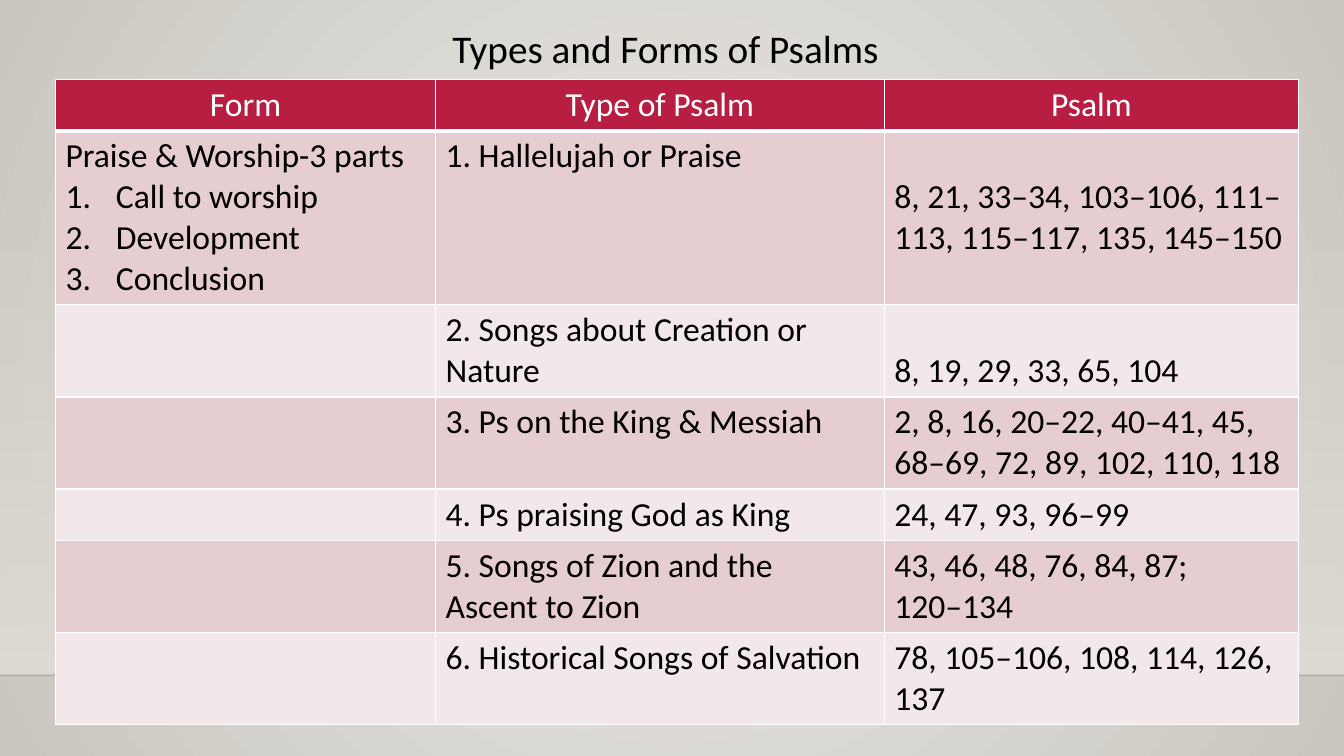
from lxml.etree import SubElement
from pptx import Presentation
from pptx.dml.color import RGBColor
from pptx.enum.shapes import MSO_CONNECTOR, MSO_SHAPE
from pptx.enum.text import MSO_ANCHOR, PP_ALIGN
from pptx.oxml.ns import qn
from pptx.util import Inches, Pt

BLACK = RGBColor(0x00, 0x00, 0x00)
WHITE = RGBColor(0xFF, 0xFF, 0xFF)
CRIMSON = RGBColor(0xB7, 0x1E, 0x42)
ROSE = RGBColor(0xE6, 0xCD, 0xCF)
PALE_ROSE = RGBColor(0xF3, 0xE8, 0xE9)
WALL_LIGHT = RGBColor(0xEC, 0xEA, 0xE7)
WALL_DARK = RGBColor(0xCA, 0xC7, 0xC1)
FLOOR = RGBColor(0xDF, 0xDB, 0xD5)

WIDTH, HEIGHT = 13.33, 7.5
COLUMN_WIDTHS = (3.77, 4.45, 4.11)
LINE_HEIGHT, CELL_PADDING = 0.4, 0.1

HEADINGS = ("Form", "Type of Psalm", "Psalm")
# Type, psalms, lines in the row, anchor of the psalms
PSALM_TYPES = [
    ("1. Hallelujah or Praise",
     "8, 21, 33–34, 103–106, 111–\n113, 115–117, 135, 145–150", 4, MSO_ANCHOR.MIDDLE),
    ("2. Songs about Creation or Nature",
     "8, 19, 29, 33, 65, 104", 2, MSO_ANCHOR.BOTTOM),
    ("3. Ps on the King & Messiah",
     "2, 8, 16, 20–22, 40–41, 45,\n68–69, 72, 89, 102, 110, 118", 2, MSO_ANCHOR.TOP),
    ("4. Ps praising God as King", "24, 47, 93, 96–99", 1, MSO_ANCHOR.TOP),
    ("5. Songs of Zion and the\nAscent to Zion",
     "43, 46, 48, 76, 84, 87;\n120–134", 2, MSO_ANCHOR.TOP),
    ("6. Historical Songs of Salvation",
     "78, 105–106, 108, 114, 126, 137", 2, MSO_ANCHOR.TOP),
]
PRAISE_FORM = "Praise & Worship-3 parts\nCall to worship\nDevelopment\nConclusion"


def write(frame, text, size=24, color=BLACK, align=PP_ALIGN.LEFT, numbered_from=None):
    """Fill a text frame, numbering the paragraphs from the given index on."""
    frame.word_wrap = True
    for index, line in enumerate(text.split("\n")):
        paragraph = frame.paragraphs[0] if index == 0 else frame.add_paragraph()
        if numbered_from is not None and index >= numbered_from:
            properties = paragraph._p.get_or_add_pPr()
            properties.set("marL", str(Inches(0.5)))
            properties.set("indent", str(Inches(-0.5)))
            SubElement(properties, qn("a:buFont"), typeface="+mj-lt")
            SubElement(properties, qn("a:buAutoNum"), type="arabicPeriod")
        paragraph.alignment = align
        run = paragraph.add_run()
        run.text = line
        run.font.name = "Calibri"
        run.font.size = Pt(size)
        run.font.bold = False
        run.font.color.rgb = color


def set_alpha(color_element, percent):
    SubElement(color_element, qn("a:alpha"), val=str(percent * 1000))


def set_stops(fill, *colors):
    fill.gradient()
    for stop, color in zip(fill.gradient_stops, colors):
        stop.color.rgb = color


def add_backdrop(slide, left, top, width, height):
    # Wall: circular gradient
    set_stops(slide.background.fill, WALL_LIGHT, WALL_DARK)
    gradient = next(slide._element.iter(qn("a:gradFill")))
    gradient.remove(gradient.find(qn("a:lin")))
    circle = SubElement(gradient, qn("a:path"), {"path": "circle"})
    SubElement(circle, qn("a:fillToRect"), l="50000", t="50000", r="50000", b="50000")

    # Haze fading in towards the floor
    haze = slide.shapes.add_shape(MSO_SHAPE.RECTANGLE, Inches(left), Inches(top),
                                  Inches(width), Inches(height))
    haze.shadow.inherit = False
    haze.line.fill.background()
    set_stops(haze.fill, FLOOR, FLOOR)
    haze.fill.gradient_angle = 270
    set_alpha(next(haze._element.iter(qn("a:srgbClr"))), 0)

    # Floor line
    edge = Inches(top + height)
    floor_line = slide.shapes.add_connector(MSO_CONNECTOR.STRAIGHT, Inches(left), edge,
                                            Inches(left + width), edge)
    floor_line.line.width = Pt(1)
    floor_line.line.color.rgb = BLACK
    set_alpha(next(floor_line._element.iter(qn("a:srgbClr"))), 20)
    SubElement(floor_line._element.spPr, qn("a:effectLst"))


def add_heading(slide, left, top, width, height):
    heading = slide.shapes.title
    heading.left, heading.top = Inches(left), Inches(top)
    heading.width, heading.height = Inches(width), Inches(height)
    heading.text_frame.vertical_anchor = MSO_ANCHOR.TOP
    write(heading.text_frame, "Types and Forms of Psalms", size=28, align=PP_ALIGN.CENTER)


def style_cell(cell, fill, top=1, bottom=1):
    for side, points in (("L", 1), ("R", 1), ("T", top), ("B", bottom)):
        border = SubElement(cell._tc.get_or_add_tcPr(), qn(f"a:ln{side}"), w=str(Pt(points)))
        SubElement(SubElement(border, qn("a:solidFill")), qn("a:srgbClr"), val=str(WHITE))
    cell.fill.solid()
    cell.fill.fore_color.rgb = fill


def add_psalm_table(slide, left, top, width, height):
    table = slide.shapes.add_table(len(PSALM_TYPES) + 1, len(HEADINGS), Inches(left),
                                   Inches(top), Inches(width), Inches(height)).table
    for column, column_width in zip(table.columns, COLUMN_WIDTHS):
        column.width = Inches(column_width)
    line_counts = [1] + [lines for _, _, lines, _ in PSALM_TYPES]
    for row, lines in zip(table.rows, line_counts):
        row.height = Inches(lines * LINE_HEIGHT + CELL_PADDING)

    # Header row
    for column, heading in enumerate(HEADINGS):
        cell = table.cell(0, column)
        style_cell(cell, CRIMSON, bottom=3)
        write(cell.text_frame, heading, color=WHITE, align=PP_ALIGN.CENTER)

    # Banded body rows
    for row, (psalm_type, psalms, _, anchor) in enumerate(PSALM_TYPES, start=1):
        for column in range(len(HEADINGS)):
            style_cell(table.cell(row, column), ROSE if row % 2 else PALE_ROSE,
                       top=3 if row == 1 else 1)
        write(table.cell(row, 1).text_frame, psalm_type)
        write(table.cell(row, 2).text_frame, psalms)
        table.cell(row, 2).vertical_anchor = anchor
    write(table.cell(1, 0).text_frame, PRAISE_FORM, numbered_from=1)


def main():
    deck = Presentation()
    deck.slide_width, deck.slide_height = Inches(WIDTH), Inches(HEIGHT)
    slide = deck.slides.add_slide(deck.slide_layouts[5])
    add_backdrop(slide, 0, 2.21, WIDTH, 4.49)
    add_heading(slide, 0.65, 0.19, 11.9, 0.57)
    add_psalm_table(slide, 0.55, 0.79, sum(COLUMN_WIDTHS), 6.3)
    deck.save("out.pptx")


if __name__ == "__main__":
    main()
